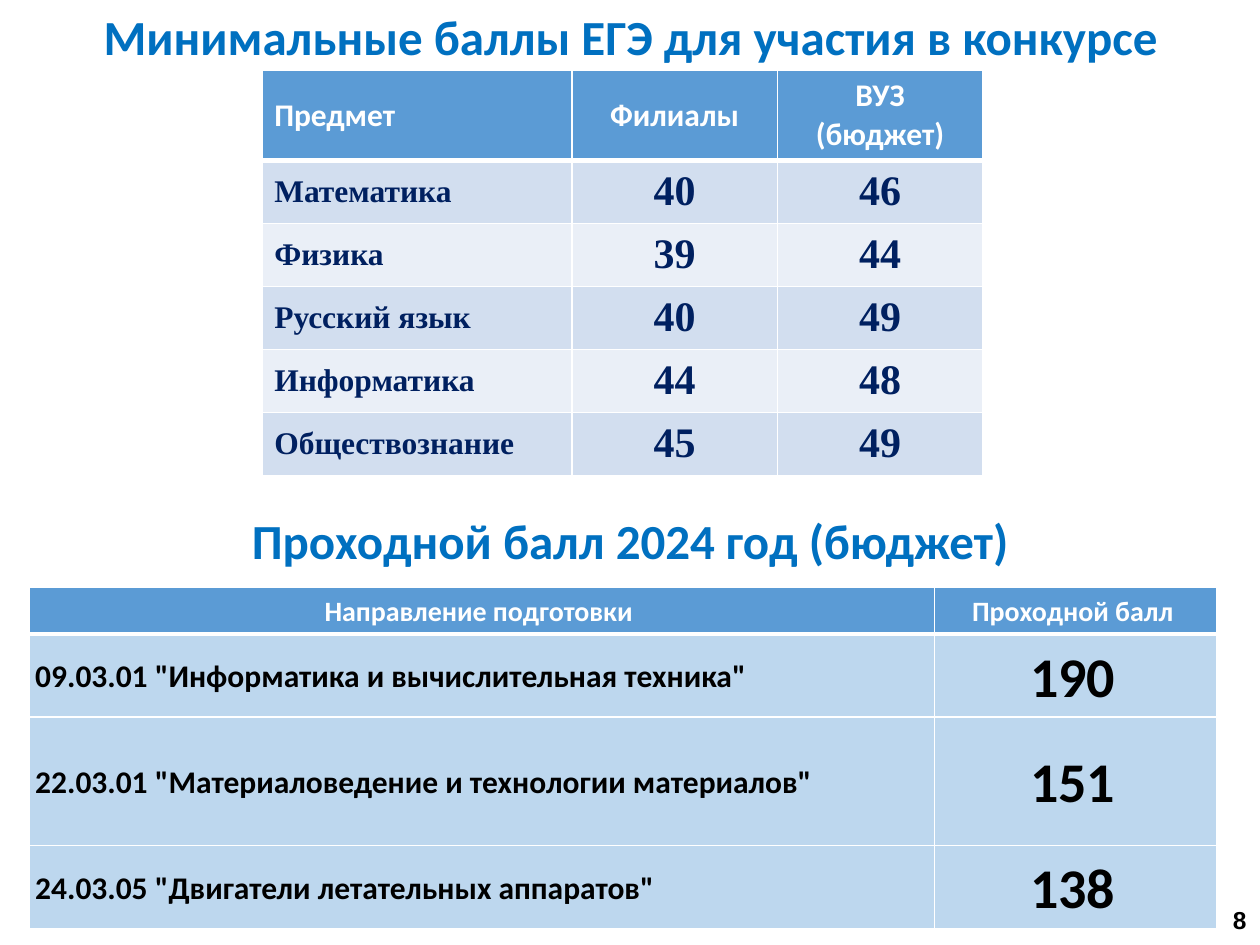
from dataclasses import dataclass

from lxml.etree import SubElement
from pptx import Presentation
from pptx.dml.color import RGBColor
from pptx.enum.text import MSO_ANCHOR, PP_ALIGN
from pptx.oxml.ns import qn
from pptx.util import Cm, Pt

WHITE = RGBColor(0xFF, 0xFF, 0xFF)
BLACK = RGBColor(0x00, 0x00, 0x00)
NAVY = RGBColor(0x00, 0x20, 0x60)
TITLE_BLUE = RGBColor(0x00, 0x70, 0xC0)
HEADER_BLUE = RGBColor(0x5B, 0x9B, 0xD5)
BAND_DARK = RGBColor(0xD2, 0xDE, 0xEF)
BAND_LIGHT = RGBColor(0xEA, 0xEF, 0xF7)
PALE_BLUE = RGBColor(0xBD, 0xD7, 0xEE)


@dataclass(frozen=True)
class TextStyle:
    size: float
    font: str
    color: RGBColor
    align: PP_ALIGN = PP_ALIGN.CENTER
    line_spacing: float = 1.0


@dataclass(frozen=True)
class Label:
    text: str
    left: float
    top: float
    width: float
    height: float
    style: TextStyle
    anchor: MSO_ANCHOR = MSO_ANCHOR.TOP


@dataclass(frozen=True)
class ScoreTable:
    """Sizes are in centimetres; the first row is the header."""
    left: float
    top: float
    column_widths: list[float]
    row_heights: list[float]
    rows: list[list[str]]
    header_styles: list[TextStyle]
    body_styles: list[TextStyle]
    bands: list[RGBColor]
    margins: tuple[float, float, float]  # left, right, top and bottom


TITLE = TextStyle(28, "Calibri", TITLE_BLUE)
PAGE_NUMBER = TextStyle(14, "Arial", BLACK, PP_ALIGN.RIGHT)
SUBJECT_HEADER = TextStyle(18, "Calibri", WHITE, PP_ALIGN.LEFT)
MINIMUM_HEADER = TextStyle(18, "Calibri", WHITE)
SUBJECT = TextStyle(18, "Times New Roman", NAVY, PP_ALIGN.LEFT)
MINIMUM = TextStyle(24, "Times New Roman", NAVY)
PASSING_HEADER = TextStyle(16, "Calibri", WHITE, line_spacing=1.07)
PROGRAMME = TextStyle(18, "Calibri", BLACK, PP_ALIGN.LEFT, 1.07)
PASSING = TextStyle(32, "Calibri", BLACK, line_spacing=1.07)

LABELS = [
    Label("Минимальные баллы ЕГЭ для участия в конкурсе", 0.86, 0, 23.7, 1.45, TITLE),
    Label("Проходной балл 2024 год (бюджет)", 2.87, 10.16, 19.66, 1.45, TITLE),
    Label("8", 19.66, 18.03, 5.72, 1.02, PAGE_NUMBER, MSO_ANCHOR.MIDDLE),
]

PASSING_SCORES = ScoreTable(
    left=0.58, top=11.84,
    column_widths=[18.26, 5.69],
    row_heights=[0.93, 1.66, 2.59, 1.66],
    rows=[
        ["Направление подготовки", "Проходной балл"],
        ['09.03.01 "Информатика и вычислительная техника"', "190"],
        ['22.03.01 "Материаловедение и технологии материалов"', "151"],
        ['24.03.05 "Двигатели летательных аппаратов"', "138"],
    ],
    header_styles=[PASSING_HEADER, PASSING_HEADER],
    body_styles=[PROGRAMME, PASSING],
    bands=[PALE_BLUE],
    margins=(0.13, 0.25, 0.1),
)

MINIMUM_SCORES = ScoreTable(
    left=5.28, top=1.42,
    column_widths=[6.25, 4.14, 4.14],
    row_heights=[1.76] + [1.27] * 5,
    rows=[
        ["Предмет", "Филиалы", "ВУЗ (бюджет)"],
        ["Математика", "40", "46"],
        ["Физика", "39", "44"],
        ["Русский язык", "40", "49"],
        ["Информатика", "44", "48"],
        ["Обществознание", "45", "49"],
    ],
    header_styles=[SUBJECT_HEADER, MINIMUM_HEADER, MINIMUM_HEADER],
    body_styles=[SUBJECT, MINIMUM, MINIMUM],
    bands=[BAND_DARK, BAND_LIGHT],
    margins=(0.25, 0.25, 0.13),
)


def write_text(text_frame, text: str, style: TextStyle) -> None:
    text_frame.text = text
    text_frame.word_wrap = True
    paragraph = text_frame.paragraphs[0]
    paragraph.alignment = style.align
    paragraph.line_spacing = style.line_spacing
    font = paragraph.runs[0].font
    font.name = style.font
    font.size = Pt(style.size)
    font.bold = True
    font.color.rgb = style.color


def add_label(slide, label: Label) -> None:
    shape = slide.shapes.add_textbox(
        Cm(label.left), Cm(label.top), Cm(label.width), Cm(label.height))
    write_text(shape.text_frame, label.text, label.style)
    shape.text_frame.vertical_anchor = label.anchor


def set_borders(cell, top: float, bottom: float) -> None:
    """Draw white borders; they must be added before the cell's fill."""
    properties = cell._tc.get_or_add_tcPr()
    for side, width in (("L", 1), ("R", 1), ("T", top), ("B", bottom)):
        line = SubElement(properties, qn(f"a:ln{side}"), w=str(Pt(width)))
        fill = SubElement(line, qn("a:solidFill"))
        SubElement(fill, qn("a:srgbClr"), val=str(WHITE))


def add_score_table(slide, scores: ScoreTable) -> None:
    table = slide.shapes.add_table(
        len(scores.rows), len(scores.column_widths),
        Cm(scores.left), Cm(scores.top),
        Cm(sum(scores.column_widths)), Cm(sum(scores.row_heights))).table
    for column, width in zip(table.columns, scores.column_widths):
        column.width = Cm(width)
    left, right, vertical = scores.margins
    for row_index, texts in enumerate(scores.rows):
        table.rows[row_index].height = Cm(scores.row_heights[row_index])
        is_header = row_index == 0
        styles = scores.header_styles if is_header else scores.body_styles
        band = scores.bands[(row_index - 1) % len(scores.bands)]
        for column_index, text in enumerate(texts):
            cell = table.cell(row_index, column_index)
            set_borders(cell, top=3 if row_index == 1 else 1,
                        bottom=3 if is_header else 1)
            cell.fill.solid()
            cell.fill.fore_color.rgb = HEADER_BLUE if is_header else band
            cell.vertical_anchor = MSO_ANCHOR.MIDDLE
            cell.margin_left, cell.margin_right = Cm(left), Cm(right)
            cell.margin_top = cell.margin_bottom = Cm(vertical)
            write_text(cell.text_frame, text, styles[column_index])


def main() -> None:
    presentation = Presentation()
    presentation.slide_width = Cm(25.4)
    presentation.slide_height = Cm(19.05)
    slide = presentation.slides.add_slide(presentation.slide_layouts[6])
    for scores in (PASSING_SCORES, MINIMUM_SCORES):
        add_score_table(slide, scores)
    for label in LABELS:
        add_label(slide, label)
    presentation.save("out.pptx")


if __name__ == "__main__":
    main()
